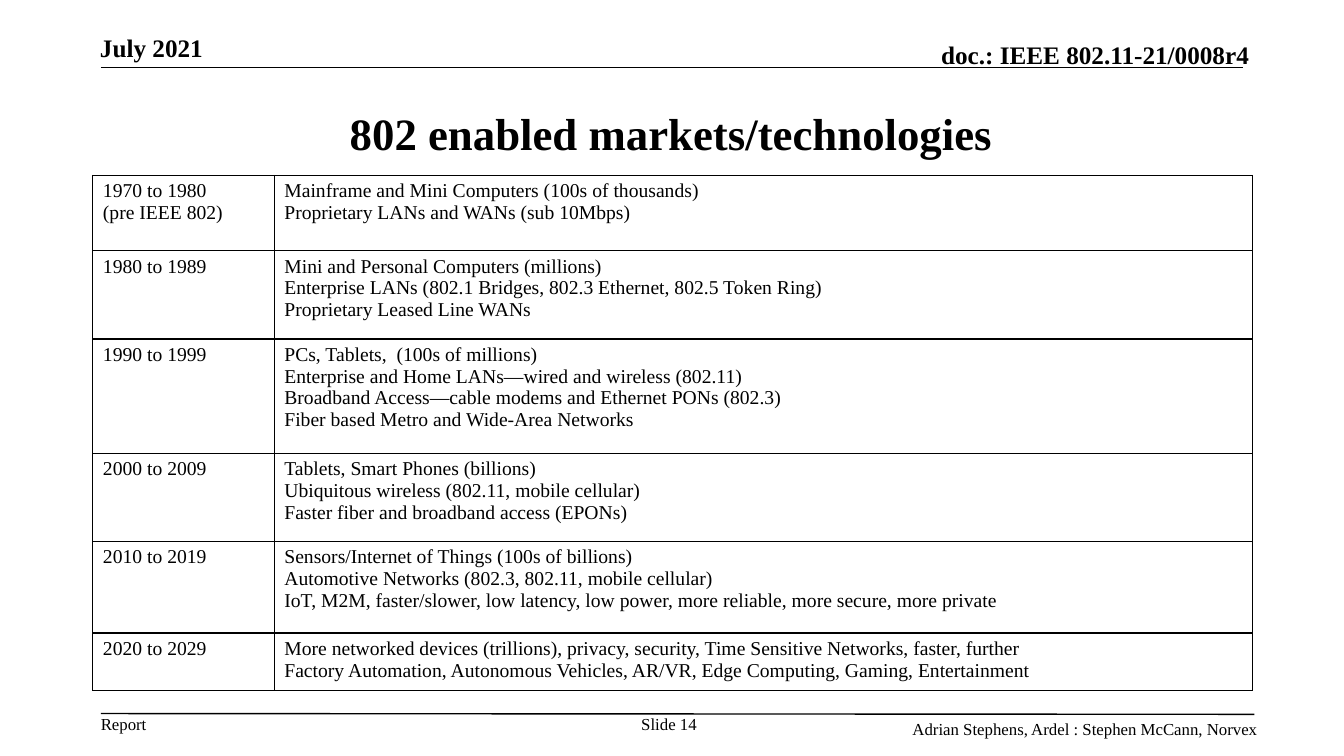
from lxml import etree
from pptx import Presentation
from pptx.dml.color import RGBColor
from pptx.enum.shapes import MSO_CONNECTOR
from pptx.enum.text import MSO_ANCHOR as Anchor, PP_ALIGN as Align
from pptx.oxml import parse_xml
from pptx.oxml.ns import nsdecls, qn
from pptx.util import Cm, Pt

BLACK = RGBColor(0, 0, 0)
WHITE = RGBColor(255, 255, 255)
FONT_NAME = "Times New Roman"

# Each row: height in cm, period, developments (\v is a line break)
DECADES = [
    (1.9, "1970 to 1980\n(pre IEEE 802)",
     "Mainframe and Mini Computers (100s of thousands)\v"
     "Proprietary LANs and WANs (sub 10Mbps)"),
    (2.22, "1980 to 1989",
     "Mini and Personal Computers (millions)\n"
     "Enterprise LANs (802.1 Bridges, 802.3 Ethernet, 802.5 Token Ring)\n"
     "Proprietary Leased Line WANs"),
    (2.88, "1990 to 1999",
     "PCs, Tablets,  (100s of millions)\n"
     "Enterprise and Home LANs—wired and wireless (802.11)\n"
     "Broadband Access—cable modems and Ethernet PONs (802.3)\n"
     "Fiber based Metro and Wide-Area Networks"),
    (2.22, "2000 to 2009",
     "Tablets, Smart Phones (billions)\n"
     "Ubiquitous wireless (802.11, mobile cellular)\v"
     "Faster fiber and broadband access (EPONs)"),
    (2.31, "2010 to 2019",
     "Sensors/Internet of Things (100s of billions)\n"
     "Automotive Networks (802.3, 802.11, mobile cellular)\n"
     "IoT, M2M, faster/slower, low latency, low power, more reliable, "
     "more secure, more private"),
    (1.45, "2020 to 2029",
     "More networked devices (trillions), privacy, security, "
     "Time Sensitive Networks, faster, further\n"
     "Factory Automation, Autonomous Vehicles, AR/VR, Edge Computing, "
     "Gaming, Entertainment"),
]


def format_text(text_frame, size, bold=False, align=Align.LEFT):
    for paragraph in text_frame.paragraphs:
        paragraph.alignment = align
        font = paragraph.font
        font.name, font.size, font.bold = FONT_NAME, Pt(size), bold
        font.color.rgb = BLACK


def add_label(slide, text, left, top, width, height, size, bold=False,
              align=Align.LEFT, anchor=Anchor.TOP, wrap=True):
    box = slide.shapes.add_textbox(Cm(left), Cm(top), Cm(width), Cm(height))
    frame = box.text_frame
    frame.margin_left = frame.margin_right = 0
    frame.margin_top = frame.margin_bottom = 0
    frame.word_wrap = wrap
    frame.vertical_anchor = anchor
    frame.text = text
    format_text(frame, size, bold, align)


def add_rule(slide, left, top, right, bottom):
    rule = slide.shapes.add_connector(
        MSO_CONNECTOR.STRAIGHT, Cm(left), Cm(top), Cm(right), Cm(bottom))
    rule.line.color.rgb = BLACK
    rule.line.width = Pt(1)
    etree.SubElement(rule._element.spPr, qn("a:effectLst"))


def add_header(slide, left, top, width):
    add_rule(slide, left, top + 0.89, left + 28.78, top + 0.89)
    add_label(slide, "July 2021", left - 0.02, top, 6.4, 0.76, 18, bold=True)
    add_label(slide, "doc.: IEEE 802.11-21/0008r4", left + width - 12.95,
              top + 0.18, 12.95, 0.76, 18, bold=True, align=Align.RIGHT,
              anchor=Anchor.BOTTOM)


def set_title(slide, left, top, width, height):
    title = slide.shapes.title
    title.left, title.top = Cm(left), Cm(top)
    title.width, title.height = Cm(width), Cm(height)
    frame = title.text_frame
    frame.text = "802 enabled markets/technologies"
    frame.vertical_anchor = Anchor.MIDDLE
    format_text(frame, 32, bold=True, align=Align.CENTER)


def add_cell_borders(cell):
    properties = cell._tc.get_or_add_tcPr()
    for index, side in enumerate(("lnL", "lnR", "lnT", "lnB")):
        properties.insert(index, parse_xml(
            f'<a:{side} {nsdecls("a")} w="12700"><a:solidFill>'
            f'<a:srgbClr val="{BLACK}"/></a:solidFill></a:{side}>'))


def add_decades_table(slide, left, top, widths):
    total_height = sum(decade[0] for decade in DECADES)
    table = slide.shapes.add_table(
        len(DECADES), len(widths), Cm(left), Cm(top),
        Cm(sum(widths)), Cm(total_height)).table
    table.first_row = table.horz_banding = False
    for column, width in zip(table.columns, widths):
        column.width = Cm(width)
    for row, (height, *texts) in zip(table.rows, DECADES):
        row.height = Cm(height)
        for cell, text in zip(row.cells, texts):
            cell.text = text
            cell.fill.solid()
            cell.fill.fore_color.rgb = WHITE
            format_text(cell.text_frame, 14)
            add_cell_borders(cell)


def add_footer(slide, left, top, width):
    add_rule(slide, left, top, left + width, top + 0.02)
    add_label(slide, "Report", left, top, 1.17, 0.51, 12, wrap=False)
    add_label(slide, "Slide 14", left + 13.39, top, 1.85, 0.51, 12,
              align=Align.CENTER)
    add_label(slide, "Adrian Stephens, Ardel : Stephen McCann, Norvex",
              left + 20.45, top + 0.13, 8.8, 0.51, 12, wrap=False)


def main():
    presentation = Presentation()
    presentation.slide_width, presentation.slide_height = Cm(33.86), Cm(19.05)
    slide = presentation.slides.add_slide(presentation.slide_layouts[5])
    add_header(slide, 2.54, 0.81, 28.93)
    set_title(slide, 6.65, 2.24, 20.52, 2.18)
    add_decades_table(slide, 2.34, 4.42, (4.57, 24.64))
    add_footer(slide, 2.54, 17.98, 29.06)
    presentation.save("out.pptx")


if __name__ == "__main__":
    main()
